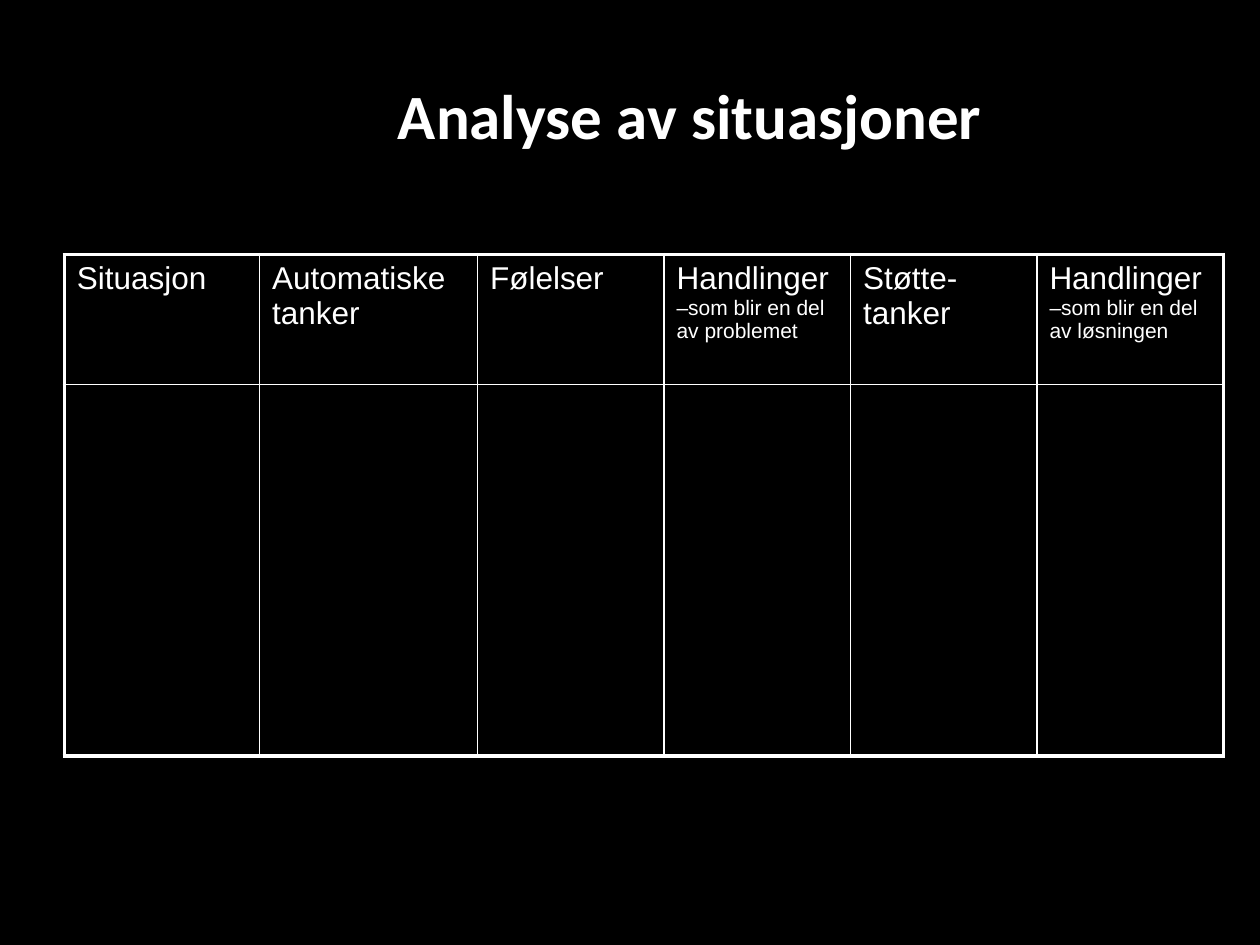
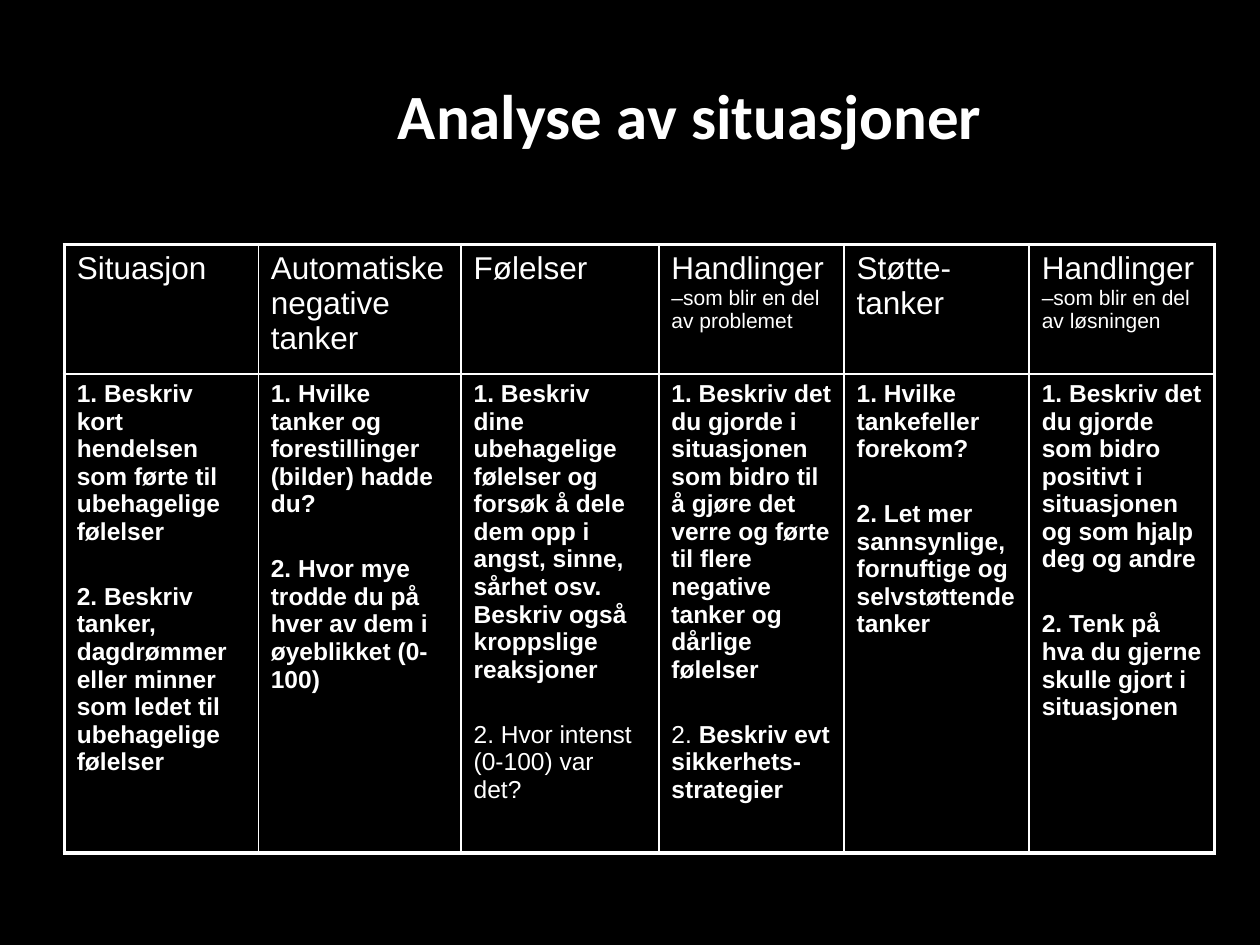
from lxml.etree import SubElement
from pptx import Presentation
from pptx.dml.color import RGBColor
from pptx.enum.lang import MSO_LANGUAGE_ID
from pptx.enum.text import MSO_ANCHOR, PP_ALIGN
from pptx.oxml.ns import qn
from pptx.util import Inches, Pt

COLORS = {"background": "000000", "ink": "FFFFFF"}
TITLE = "Analyse av situasjoner"
TITLE_BOX = (1.14, 0.28, 8.67, 1.25)
TABLE_LEFT = 0.51
HEADING_SIZE, NOTE_SIZE, QUESTION_SIZE = 18, 12, 14
QUESTION_GAP = 21.4
OUTER_LINE, INNER_LINE = 2.25, 1


def headings(thoughts):
    return [
        ("Situasjon", ""),
        (thoughts, ""),
        ("Følelser", ""),
        ("Handlinger ", "–som blir en del av problemet"),
        ("Støtte-tanker", ""),
        ("Handlinger ", "–som blir en del av løsningen"),
    ]


QUESTIONS = [
    [("", "1. Beskriv kort hendelsen som førte til ubehagelige følelser"),
     ("", "2. Beskriv tanker, dagdrømmer eller minner som ledet til ubehagelige følelser")],
    [("", "1. Hvilke tanker og forestillinger (bilder) hadde du?"),
     ("", "2. Hvor mye trodde du på hver av dem i øyeblikket (0-100)")],
    [("", "1. Beskriv dine ubehagelige følelser og forsøk å dele dem opp i angst, "
          "sinne, sårhet osv. Beskriv også kroppslige reaksjoner"),
     ("2. Hvor intenst (0-100) var det?", "")],
    [("", "1. Beskriv det du gjorde i situasjonen som bidro til å gjøre det verre "
          "og førte til flere negative tanker og dårlige følelser"),
     ("2. ", "Beskriv evt sikkerhets-strategier")],
    [("", "1. Hvilke tankefeller forekom?"),
     ("", "2. Let mer sannsynlige, fornuftige og selvstøttende tanker")],
    [("", "1. Beskriv det du gjorde som bidro positivt i situasjonen og som hjalp deg og andre"),
     ("", "2. Tenk på hva du gjerne skulle gjort i situasjonen")],
]

SLIDES = [
    {"top": 2.02, "columns": [1.55, 1.73] + [1.48] * 4, "rows": [1.03, 2.95],
     "headings": headings("Automatiske tanker"), "questions": []},
    {"top": 1.94, "columns": [1.54, 1.61, 1.57] + [1.47] * 3, "rows": [1.03, 3.8],
     "headings": headings("Automatiske negative tanker"), "questions": QUESTIONS},
]


def color(name):
    return RGBColor.from_string(COLORS[name])


def style(font, size, bold=None, face="Arial"):
    font.name, font.size, font.bold = face, Pt(size), bold
    font.color.rgb = color("ink")
    font.language_id = MSO_LANGUAGE_ID.NORWEGIAN_BOKMOL


def write(paragraph, pieces):
    pieces = [piece for piece in pieces if piece[0]]
    for text, size, bold in pieces:
        run = paragraph.add_run()
        run.text = text
        style(run.font if len(pieces) > 1 else paragraph.font, size, bold)


def add_title(slide):
    frame = slide.shapes.add_textbox(*map(Inches, TITLE_BOX)).text_frame
    frame.word_wrap = True
    frame.vertical_anchor = MSO_ANCHOR.MIDDLE
    title = frame.paragraphs[0]
    title.text = TITLE
    title.alignment = PP_ALIGN.CENTER
    style(title.font, 36, True, "Calibri")


def frame_cell(cell, outer_sides):
    properties = cell._tc.get_or_add_tcPr()
    for side in "LRTB":
        width = OUTER_LINE if side in outer_sides else INNER_LINE
        line = SubElement(properties, qn(f"a:ln{side}"), w=str(Pt(width)))
        SubElement(SubElement(line, qn("a:solidFill")), qn("a:srgbClr"), val=COLORS["ink"])
    cell.fill.solid()
    cell.fill.fore_color.rgb = color("background")


def add_analysis(slide, content):
    columns, rows = content["columns"], content["rows"]
    table = slide.shapes.add_table(
        len(rows), len(columns), Inches(TABLE_LEFT), Inches(content["top"]),
        Inches(sum(columns)), Inches(sum(rows))).table
    table.first_row = table.horz_banding = False
    for column, width in zip(table.columns, columns):
        column.width = Inches(width)
    for row, height in zip(table.rows, rows):
        row.height = Inches(height)

    for row in range(len(rows)):
        for column in range(len(columns)):
            edges = {"L": column == 0, "R": column == len(columns) - 1,
                     "T": row == 0, "B": row == len(rows) - 1}
            frame_cell(table.cell(row, column), [side for side, outer in edges.items() if outer])

    for column, (heading, note) in enumerate(content["headings"]):
        write(table.cell(0, column).text_frame.paragraphs[0],
              [(heading, HEADING_SIZE, False), (note, NOTE_SIZE, False)])

    for column, questions in enumerate(content["questions"]):
        frame = table.cell(1, column).text_frame
        for number, (plain, strong) in enumerate(questions):
            paragraph = frame.add_paragraph() if number else frame.paragraphs[0]
            if number:
                paragraph.space_before = Pt(QUESTION_GAP)
            write(paragraph, [(plain, QUESTION_SIZE, False), (strong, QUESTION_SIZE, True)])


def main():
    deck = Presentation()
    deck.slide_width, deck.slide_height = Inches(10), Inches(7.5)
    for content in SLIDES:
        slide = deck.slides.add_slide(deck.slide_layouts[6])
        slide.background.fill.solid()
        slide.background.fill.fore_color.rgb = color("background")
        add_title(slide)
        add_analysis(slide, content)
    deck.save("out.pptx")


if __name__ == "__main__":
    main()
